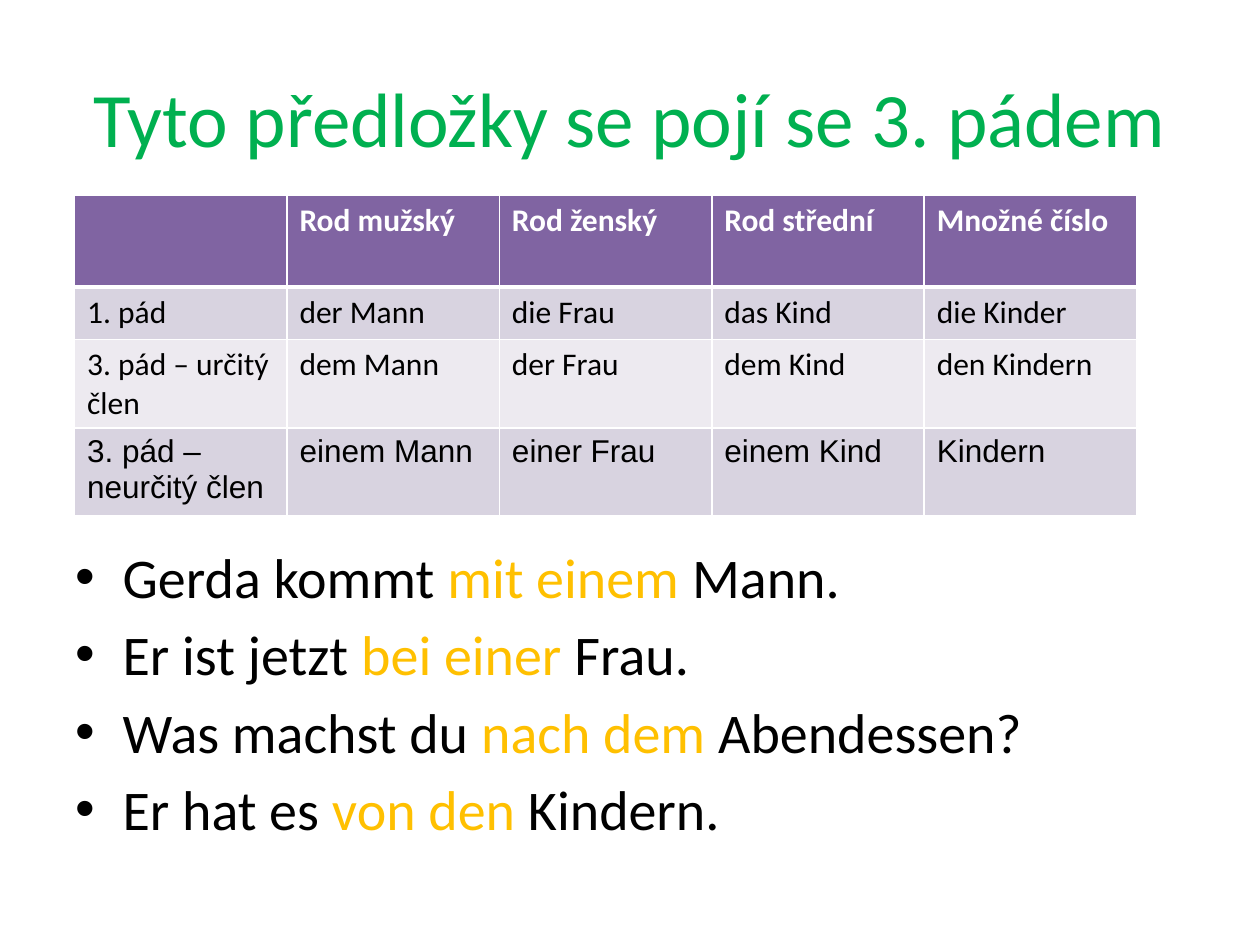
from lxml import etree
from pptx import Presentation
from pptx.dml.color import RGBColor
from pptx.enum import text
from pptx.oxml import ns
from pptx.util import Pt

COLORS = {
    "title": "00B050", "text": "000000", "highlight": "FFC000",
    "white": "FFFFFF", "header": "8064A2",
    "dark_band": "D8D3E0", "light_band": "EDEAF0",
}

DECLENSION = [
    ["", "Rod mužský", "Rod ženský", "Rod střední", "Množné číslo"],
    ["1. pád", "der Mann", "die Frau", "das Kind", "die Kinder"],
    ["3. pád – určitý člen", "dem Mann", "der Frau", "dem Kind", "den Kindern"],
    ["3. pád – neurčitý člen", "einem Mann", "einer Frau", "einem Kind", "Kindern"],
]
ROW_HEIGHTS = [52.5, 30, 30, 30]
ROW_FILLS = ["header", "dark_band", "light_band", "dark_band"]
ROW_FONTS = ["Calibri", "Calibri", "Calibri", "Arial"]
COLUMN_WIDTH = 121.4

# Start of sentence, preposition with article, end of sentence
SENTENCES = [
    ("Gerda kommt ", "mit einem ", "Mann."),
    ("Er ist jetzt ", "bei einer ", "Frau."),
    ("Was machst du ", "nach dem ", "Abendessen?"),
    ("Er hat es ", "von den ", "Kindern."),
]


def rgb(name):
    return RGBColor.from_string(COLORS[name])


def format_run(run, size, color, font="Calibri", bold=False):
    run.font.size = Pt(size)
    run.font.name = font
    run.font.bold = bold
    run.font.color.rgb = rgb(color)


def place(shape, left, top, width, height):
    shape.left, shape.top = Pt(left), Pt(top)
    shape.width, shape.height = Pt(width), Pt(height)


def add_title(slide, wording):
    title = slide.shapes.title
    place(title, 36, 21.6, 648, 90)
    title.text_frame.text = wording
    title.text_frame.vertical_anchor = text.MSO_ANCHOR.MIDDLE
    paragraph = title.text_frame.paragraphs[0]
    paragraph.alignment = text.PP_ALIGN.CENTER
    format_run(paragraph.runs[0], 44, "title")


def set_borders(cell, bottom_width):
    properties = cell._tc.get_or_add_tcPr()
    for side, width in (("L", 1), ("R", 1), ("T", 1), ("B", bottom_width)):
        line = etree.SubElement(properties, ns.qn(f"a:ln{side}"), w=str(Pt(width)))
        fill = etree.SubElement(line, ns.qn("a:solidFill"))
        etree.SubElement(fill, ns.qn("a:srgbClr"), val=COLORS["white"])


def add_declension_table(slide):
    columns = len(DECLENSION[0])
    table = slide.shapes.add_table(
        len(DECLENSION), columns, Pt(42.6), Pt(111.6),
        Pt(COLUMN_WIDTH * columns), Pt(sum(ROW_HEIGHTS))).table
    for column in table.columns:
        column.width = Pt(COLUMN_WIDTH)
    for r, words in enumerate(DECLENSION):
        is_header = r == 0
        table.rows[r].height = Pt(ROW_HEIGHTS[r])
        for c, word in enumerate(words):
            cell = table.cell(r, c)
            cell.text_frame.text = word
            for run in cell.text_frame.paragraphs[0].runs:
                format_run(run, 18, "white" if is_header else "text",
                           ROW_FONTS[r], is_header)
            set_borders(cell, 3 if is_header else 1)
            cell.fill.solid()
            cell.fill.fore_color.rgb = rgb(ROW_FILLS[r])


def add_bullet(paragraph, indent):
    properties = paragraph._p.get_or_add_pPr()
    properties.set("marL", str(Pt(indent)))
    properties.set("indent", str(-Pt(indent)))
    etree.SubElement(properties, ns.qn("a:buFont"), typeface="Arial")
    etree.SubElement(properties, ns.qn("a:buChar"), char="•")


def add_sentences(slide):
    frame = slide.shapes.add_textbox(Pt(36), Pt(126), Pt(648), Pt(356.4)).text_frame
    frame.word_wrap = True
    frame.margin_top = Pt(184)  # keeps the sentences below the table
    for i, parts in enumerate(SENTENCES):
        paragraph = frame.add_paragraph() if i else frame.paragraphs[0]
        paragraph.space_before = Pt(5.8 if i else 0)
        add_bullet(paragraph, 27)
        for part, color in zip(parts, ("text", "highlight", "text")):
            run = paragraph.add_run()
            run.text = part
            format_run(run, 32, color)


def main():
    presentation = Presentation()
    presentation.slide_width, presentation.slide_height = Pt(720), Pt(540)
    slide = presentation.slides.add_slide(presentation.slide_layouts[5])
    add_title(slide, "Tyto předložky se pojí se 3. pádem")
    add_sentences(slide)
    add_declension_table(slide)
    presentation.save("out.pptx")


if __name__ == "__main__":
    main()
